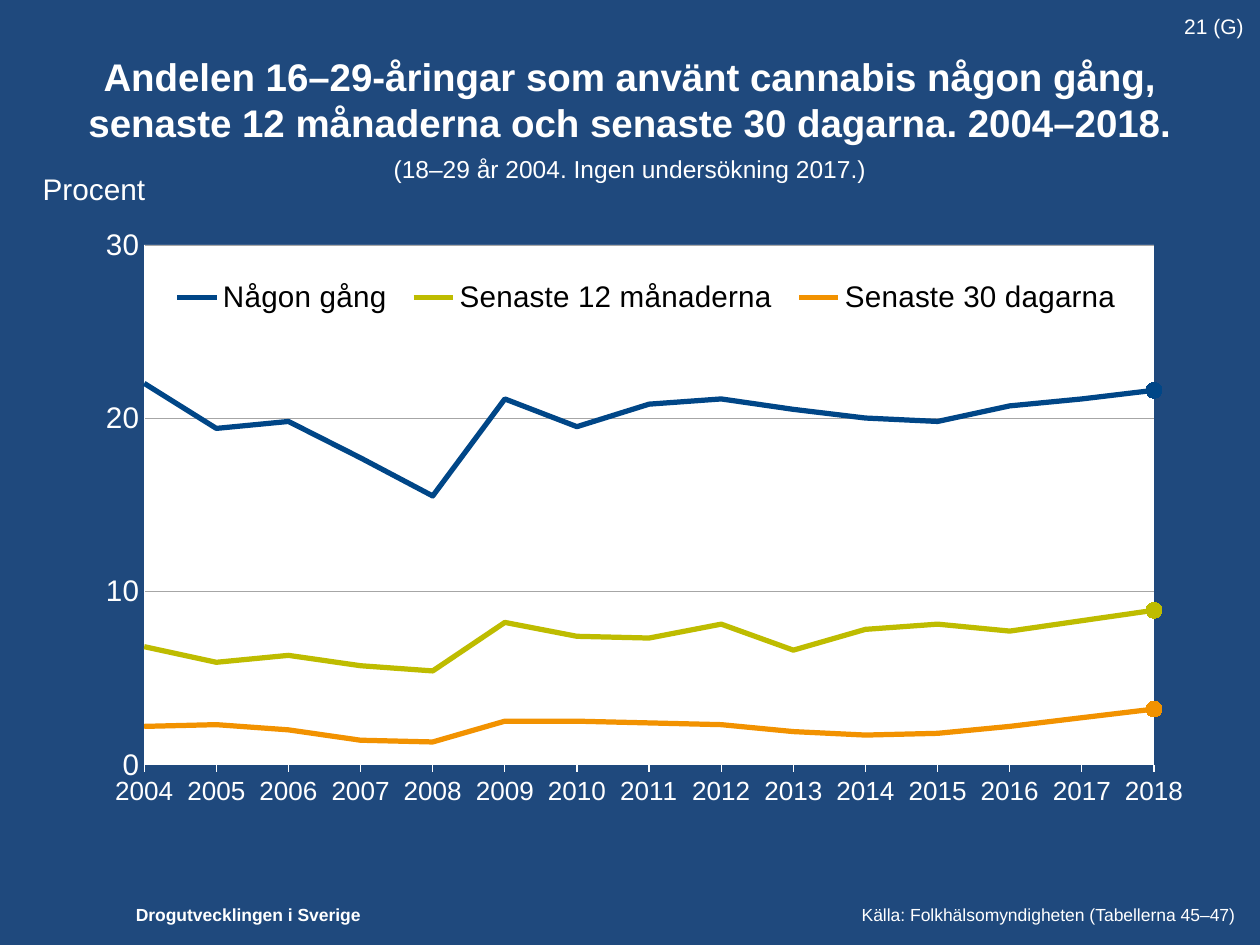
from dataclasses import dataclass

from lxml.etree import SubElement
from pptx import Presentation
from pptx.chart.data import CategoryChartData
from pptx.dml.color import RGBColor
from pptx.enum.chart import XL_CHART_TYPE, XL_LEGEND_POSITION, XL_MARKER_STYLE, XL_TICK_MARK
from pptx.enum.text import MSO_ANCHOR, PP_ALIGN
from pptx.oxml import parse_xml
from pptx.oxml.ns import nsdecls, qn
from pptx.util import Inches, Pt

WIDTH, HEIGHT = 10, 7.5
YEARS = [str(year) for year in range(2004, 2019)]
SERIES = [
    ("Någon gång", "004687",
     [22, 19.4, 19.8, 17.7, 15.5, 21.1, 19.5, 20.8, 21.1, 20.5, 20, 19.8, 20.7, 21.1, 21.6]),
    ("Senaste 12 månaderna", "BEBC00",
     [6.8, 5.9, 6.3, 5.7, 5.4, 8.2, 7.4, 7.3, 8.1, 6.6, 7.8, 8.1, 7.7, 8.3, 8.9]),
    ("Senaste 30 dagarna", "F29200",
     [2.2, 2.3, 2, 1.4, 1.3, 2.5, 2.5, 2.4, 2.3, 1.9, 1.7, 1.8, 2.2, 2.7, 3.2]),
]


@dataclass(frozen=True)
class Theme:
    """Colours, font and type sizes of the slide."""
    background: str = "1F497D"
    text: str = "FFFFFF"
    plot: str = "FFFFFF"
    legend: str = "000000"
    grid: str = "A6A6A6"
    font: str = "Arial"
    title: int = 22
    subtitle: int = 14
    label: int = 17
    years: int = 15
    number: int = 12
    footer: int = 10


THEME = Theme()


def style_font(font, size, color=THEME.text, bold=False):
    """Set face, size, colour and weight of a font."""
    font.name, font.size, font.bold = THEME.font, Pt(size), bold
    font.color.rgb = RGBColor.from_string(color)


def style_line(line, color, width):
    """Set colour and width of a line."""
    line.color.rgb = RGBColor.from_string(color)
    line.width = Pt(width)


def place(left, top, width, height):
    """Turn shares of the slide into lengths."""
    return (Inches(WIDTH * left), Inches(HEIGHT * top),
            Inches(WIDTH * width), Inches(HEIGHT * height))


def add_text(page, area, lines, anchor=MSO_ANCHOR.TOP, align=PP_ALIGN.LEFT):
    """Add a text box with one paragraph per (text, size, bold, space before)."""
    frame = page.shapes.add_textbox(*place(*area)).text_frame
    frame.word_wrap, frame.vertical_anchor = True, anchor
    for index, (text, size, bold, before) in enumerate(lines):
        para = frame.add_paragraph() if index else frame.paragraphs[0]
        para.alignment = align
        para.space_before = Pt(before)
        span = para.add_run()
        span.text = text
        style_font(span.font, size, bold=bold)


def make_layout(left, top, width, height, inner=False):
    """Build a manual chart layout from shares of the chart."""
    layout = parse_xml(f"<c:layout {nsdecls('c')}><c:manualLayout/></c:layout>")
    settings = [("layoutTarget", "inner")] if inner else []
    settings += [("xMode", "edge"), ("yMode", "edge"),
                 ("x", left), ("y", top), ("w", width), ("h", height)]
    for name, value in settings:
        SubElement(layout[0], qn(f"c:{name}")).set("val", str(value))
    return layout


def style_axes(chart):
    """Style both axes and let the lines start at the value axis."""
    years, percent = chart.category_axis, chart.value_axis
    for axis, size, width in ((years, THEME.years, 0.75), (percent, THEME.label, 0.25)):
        style_font(axis.tick_labels.font, size)
        style_line(axis.format.line, THEME.text, width)
    years.major_tick_mark = XL_TICK_MARK.OUTSIDE
    percent.major_tick_mark = XL_TICK_MARK.NONE
    percent.minimum_scale, percent.maximum_scale, percent.major_unit = 0, 30, 10
    percent.tick_labels.number_format = "0"
    percent.tick_labels.number_format_is_linked = False
    percent.has_major_gridlines = True
    style_line(percent.major_gridlines.format.line, THEME.grid, 0.25)
    percent._element.find(qn("c:majorUnit")).addprevious(
        parse_xml(f"<c:crossBetween {nsdecls('c')} val='midCat'/>"))


def style_series(series, color):
    """Draw a plain line with a dot on its last year."""
    series.smooth = False
    style_line(series.format.line, color, 3)
    series.marker.style = XL_MARKER_STYLE.NONE
    last = series.points[len(YEARS) - 1]
    style_line(last.format.line, color, 3)
    last.marker.style, last.marker.size = XL_MARKER_STYLE.CIRCLE, 9
    last.marker.format.fill.solid()
    last.marker.format.fill.fore_color.rgb = RGBColor.from_string(color)
    style_line(last.marker.format.line, color, 0.75)


def style_plot(chart):
    """Place the plot area and fill it."""
    area = chart._chartSpace.chart.plotArea
    for layout in area.findall(qn("c:layout")):
        area.remove(layout)
    area.insert(0, make_layout(0.076, 0.034, 0.903, 0.849, inner=True))
    area.append(parse_xml(
        f"<c:spPr {nsdecls('c', 'a')}><a:solidFill>"
        f"<a:srgbClr val='{THEME.plot}'/></a:solidFill></c:spPr>"))


def add_legend(chart):
    """Lay the legend inside the top of the plot."""
    chart.has_legend = True
    legend = chart.legend
    legend.position, legend.include_in_layout = XL_LEGEND_POSITION.TOP, False
    style_font(legend.font, THEME.label, THEME.legend)
    for layout in legend._element.findall(qn("c:layout")):
        legend._element.remove(layout)
    legend._element.find(qn("c:legendPos")).addnext(make_layout(0.09, 0.08, 0.87, 0.08))


def add_line_chart(page, area):
    """Add the line chart of cannabis use by year."""
    data = CategoryChartData(number_format="0.0")
    data.categories = YEARS
    for name, _, values in SERIES:
        data.add_series(name, values)
    chart = page.shapes.add_chart(XL_CHART_TYPE.LINE, *place(*area), data).chart
    chart.has_title = False
    style_font(chart.font, THEME.label)
    chart.plots[0].vary_by_categories = False
    style_axes(chart)
    for series, (_, color, _) in zip(chart.plots[0].series, SERIES):
        style_series(series, color)
    style_plot(chart)
    add_legend(chart)


def main():
    """Build and save the slide."""
    deck = Presentation()
    deck.slide_width, deck.slide_height = Inches(WIDTH), Inches(HEIGHT)
    page = deck.slides.add_slide(deck.slide_layouts[6])
    page.background.fill.solid()
    page.background.fill.fore_color.rgb = RGBColor.from_string(THEME.background)

    add_text(page, (0.098, 0.95, 0.22, 0.036),
             [("Drogutvecklingen i Sverige", THEME.footer, True, 0)])
    add_text(page, (0.012, 0.045, 0.976, 0.16), [
        ("Andelen 16–29-åringar som använt cannabis någon gång,", THEME.title, True, 0),
        ("senaste 12 månaderna och senaste 30 dagarna. 2004–2018.", THEME.title, True, 0),
        ("(18–29 år 2004. Ingen undersökning 2017.)", THEME.subtitle, False, 5),
    ], MSO_ANCHOR.MIDDLE, PP_ALIGN.CENTER)
    add_line_chart(page, (0.047, 0.237, 0.892, 0.648))
    add_text(page, (0.93, 0.008, 0.072, 0.04), [("21 (G)", THEME.number, False, 0)])
    add_text(page, (0.024, 0.174, 0.11, 0.052),
             [("Procent", THEME.label, False, 0)], MSO_ANCHOR.MIDDLE)
    add_text(page, (0.674, 0.95, 0.325, 0.036),
             [("Källa: Folkhälsomyndigheten (Tabellerna 45–47)", THEME.footer, False, 0)])
    deck.save("out.pptx")


if __name__ == "__main__":
    main()
